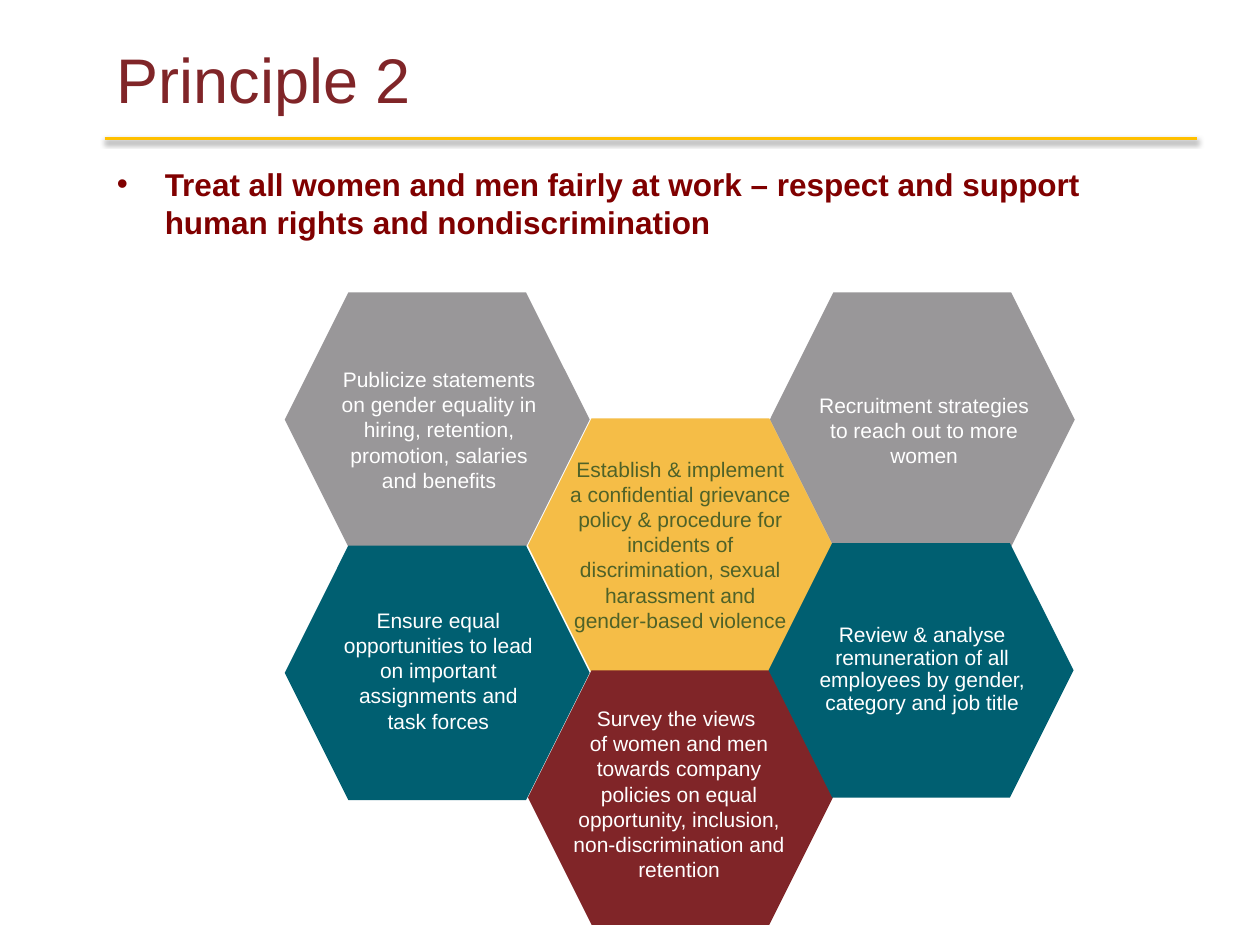
from lxml import etree
from pptx import Presentation
from pptx.dml.color import RGBColor
from pptx.enum.shapes import MSO_CONNECTOR, MSO_SHAPE
from pptx.enum.text import MSO_ANCHOR, PP_ALIGN
from pptx.oxml import parse_xml
from pptx.oxml.ns import nsdecls, qn
from pptx.util import Inches, Pt

HEX, LINE = MSO_SHAPE.HEXAGON, MSO_CONNECTOR.STRAIGHT
TOP, MID = MSO_ANCHOR.TOP, MSO_ANCHOR.MIDDLE
LEFT, CENTER = PP_ALIGN.LEFT, PP_ALIGN.CENTER

# Content
TITLE = "Principle 2"
LEAD = ("Treat all women and men fairly at work – respect and support "
        "human rights and nondiscrimination")
GRAY, GOLD, RED, TEAL = "999799", "F5BD47", "802528", "005F71"
WHITE, GREEN = "FFFFFF", "4F6228"
CELL = (2.42, 2.02)
PLAIN = {"anchor": TOP, "pad": (0.1, 0.05)}
TIGHT = {"anchor": MID, "pad": (0, 0.03)}
# Hexagon corner, fill, text box, text color, box format, paragraphs
CELLS = [
    ((6.11, 2.32), GRAY, (6.5, 2.72, 1.67, 1.39), WHITE, TIGHT,
     ["Recruitment strategies to reach out to more women"]),
    ((4.19, 3.32), GOLD, (4.52, 3.52, 1.76, 1.6), GREEN, TIGHT,
     ["Establish & implement a confidential grievance policy & procedure for "
      "incidents of discrimination, sexual harassment and gender-based violence"]),
    ((4.19, 5.32), RED, (4.39, 5.55, 2, 1.51), WHITE, PLAIN,
     ["Survey the views ",
      "of women and men towards company policies on equal opportunity, "
      "inclusion, non-discrimination and retention"]),
    ((2.26, 2.32), GRAY, (2.53, 2.86, 1.91, 1.11), WHITE, PLAIN,
     ["Publicize statements on gender equality in hiring, retention, "
      "promotion, salaries and benefits"]),
    ((2.26, 4.33), TEAL, (2.6, 4.77, 1.76, 1.11), WHITE, PLAIN,
     ["Ensure equal opportunities to lead on important assignments and "
      "task forces"]),
    ((6.1, 4.31), TEAL, (6.37, 4.62, 1.9, 1.39), WHITE,
     {"anchor": MID, "pad": (0, 0.04), "gap": 0.9},
     ["Review & analyse remuneration of all employees by gender, category "
      "and job title"]),
]


def color(code):
    return RGBColor.from_string(code)


def add_text(slide, box, lines, ink, size=12, bold=False, align=CENTER,
             anchor=TOP, pad=(0.1, 0.05), gap=None, bullet=False):
    frame = slide.shapes.add_textbox(*map(Inches, box)).text_frame
    side, edge = map(Inches, pad)
    form = {"word_wrap": True, "vertical_anchor": anchor,
            "margin_left": side, "margin_right": side,
            "margin_top": edge, "margin_bottom": edge}
    for key, value in form.items():
        setattr(frame, key, value)
    for i, line in enumerate(lines):
        para = frame.add_paragraph() if i else frame.paragraphs[0]
        para.alignment = align
        if gap:
            para.line_spacing = gap
        if bullet:
            props = para._p.get_or_add_pPr()
            props.set("marL", str(Inches(0.38)))
            props.set("indent", str(-Inches(0.38)))
            etree.SubElement(props, qn("a:buFont")).set("typeface", "Arial")
            etree.SubElement(props, qn("a:buChar")).set("char", "•")
        run = para.add_run()
        run.text = line
        for key, value in {"name": "Arial", "size": Pt(size), "bold": bold}.items():
            setattr(run.font, key, value)
        run.font.color.rgb = color(ink)


def add_rule(slide):
    ends = map(Inches, (0.83, 1.1, 9.5, 1.1))
    rule = slide.shapes.add_connector(LINE, *ends)
    rule.line.color.rgb = color("FFC000")
    rule.line.width = Pt(2)
    rule._element.spPr.append(parse_xml(
        f'<a:effectLst {nsdecls("a")}>'
        f'<a:outerShdw blurRad="{Pt(3.1)}" dist="{Pt(1.6)}" dir="5400000" '
        'rotWithShape="0"><a:srgbClr val="000000"><a:alpha val="38000"/>'
        '</a:srgbClr></a:outerShdw></a:effectLst>'))


def add_hex(slide, spot, fill):
    cell = slide.shapes.add_shape(HEX, *map(Inches, spot + CELL))
    cell.shadow.inherit = False
    cell.fill.solid()
    cell.fill.fore_color.rgb = color(fill)
    cell.line.fill.background()


def main():
    deck = Presentation()
    deck.slide_width, deck.slide_height = Inches(10), Inches(7.5)
    slide = deck.slides.add_slide(deck.slide_layouts[6])

    # Honeycomb
    add_rule(slide)
    for spot, fill, box, ink, form, lines in CELLS:
        add_hex(slide, spot, fill)
        add_text(slide, box, lines, ink, **form)

    # Title and lead
    add_text(slide, (0.83, 0.3, 8.67, 0.65), [TITLE], RED, size=36,
             align=LEFT, anchor=MID)
    add_text(slide, (0.83, 1.26, 8.67, 0.8), [LEAD], "800000", size=18,
             bold=True, align=LEFT, bullet=True)
    deck.save("out.pptx")


if __name__ == "__main__":
    main()
